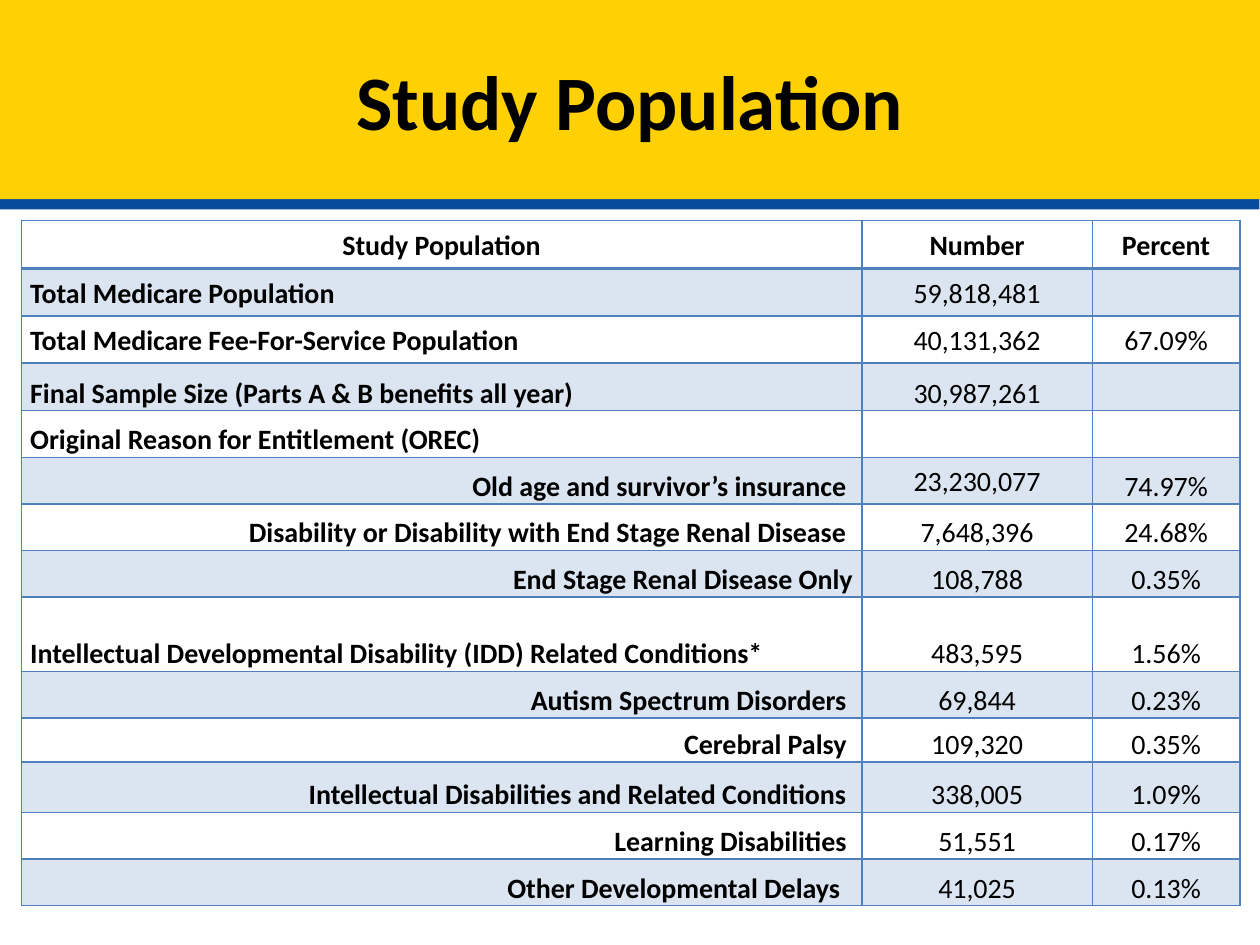
import dataclasses

import lxml.etree
import pptx
import pptx.dml.color
import pptx.enum.text
import pptx.oxml
import pptx.oxml.ns
import pptx.util

Inches = pptx.util.Inches
Align = pptx.enum.text.PP_ALIGN
Anchor = pptx.enum.text.MSO_ANCHOR
qn = pptx.oxml.ns.qn


@dataclasses.dataclass(frozen=True)
class Theme:
    font: str = "Calibri"
    title_size: int = 44
    table_size: int = 16
    text: str = "000000"
    banner: str = "FFD004"
    banner_edge: str = "084A9C"
    accent: str = "4F81BD"
    band_opacity: int = 20
    line_spacing: float = 1.07
    cell_margin: float = 0.07


@dataclasses.dataclass
class Row:
    label: str
    number: str = ""
    percent: str = ""
    height: float = 0.37
    indent: float | None = None  # extra right margin; right-aligns the label
    anchor: Anchor = Anchor.BOTTOM
    number_anchor: Anchor | None = None


COLUMN_WIDTHS = (6.67, 1.83, 1.17)
ROWS = (
    Row("Study Population", "Number", "Percent", 0.38, anchor=Anchor.MIDDLE),
    Row("Total Medicare Population", "59,818,481", height=0.38, anchor=Anchor.MIDDLE),
    Row("Total Medicare Fee-For-Service Population", "40,131,362", "67.09%", anchor=Anchor.MIDDLE),
    Row("Final Sample Size (Parts A & B benefits all year)", "30,987,261", height=0.38),
    Row("Original Reason for Entitlement (OREC)"),
    Row("Old age and survivor’s insurance", "23,230,077", "74.97%", indent=0.05,
        number_anchor=Anchor.MIDDLE),
    Row("Disability or Disability with End Stage Renal Disease", "7,648,396", "24.68%", indent=0.05),
    Row("End Stage Renal Disease Only", "108,788", "0.35%", indent=0),
    Row("Intellectual Developmental Disability (IDD) Related Conditions*", "483,595", "1.56%", 0.59),
    Row("Autism Spectrum Disorders", "69,844", "0.23%", indent=0.05),
    Row("Cerebral Palsy", "109,320", "0.35%", 0.35, indent=0.05),
    Row("Intellectual Disabilities and Related Conditions", "338,005", "1.09%", 0.4, indent=0.05),
    Row("Learning Disabilities", "51,551", "0.17%", indent=0.05),
    Row("Other Developmental Delays", "41,025", "0.13%", indent=0.1),
)


class SlideBuilder:
    def __init__(self, slide, theme):
        self.slide = slide
        self.theme = theme

    def add_text(self, paragraph, text, size, bold, alignment):
        paragraph.alignment = alignment
        run = paragraph.add_run()
        run.text = text
        run.font.name = self.theme.font
        run.font.size = pptx.util.Pt(size)
        run.font.bold = bold
        run.font.color.rgb = pptx.dml.color.RGBColor.from_string(self.theme.text)

    def add_banner_title(self, text, left, top, width, height):
        """Fill the title placeholder and give it a hard blue edge below."""
        title = self.slide.shapes.title
        title.left, title.top, title.width, title.height = left, top, width, height
        title.fill.solid()
        title.fill.fore_color.rgb = pptx.dml.color.RGBColor.from_string(self.theme.banner)
        title.text_frame.vertical_anchor = Anchor.MIDDLE
        self.add_text(title.text_frame.paragraphs[0], text, self.theme.title_size, True, Align.CENTER)
        title.shadow.inherit = False
        effects = title.element.spPr.find(qn("a:effectLst"))
        shadow = lxml.etree.SubElement(
            effects, qn("a:outerShdw"), blurRad="0", dist=str(pptx.util.Pt(6)),
            dir=str(94 * 60000), algn="tl", rotWithShape="0")
        lxml.etree.SubElement(shadow, qn("a:srgbClr"), val=self.theme.banner_edge)

    def add_table(self, rows, column_widths, left, top):
        width = Inches(sum(column_widths))
        height = Inches(sum(row.height for row in rows))
        table = self.slide.shapes.add_table(
            len(rows), len(column_widths), left, top, width, height).table
        for column, column_width in zip(table.columns, column_widths):
            column.width = Inches(column_width)
        for row_index, row in enumerate(rows):
            table.rows[row_index].height = Inches(row.height)
            for column_index, text in enumerate((row.label, row.number, row.percent)):
                self.format_cell(table.cell(row_index, column_index), text, row,
                                 row_index, column_index)

    def format_cell(self, cell, text, row, row_index, column_index):
        is_header, is_label = row_index == 0, column_index == 0
        alignment, indent = Align.CENTER, 0
        if is_label and not is_header:
            alignment = Align.LEFT if row.indent is None else Align.RIGHT
            indent = row.indent or 0
        cell.margin_left = Inches(self.theme.cell_margin)
        cell.margin_right = Inches(self.theme.cell_margin + indent)
        cell.margin_top = cell.margin_bottom = 0
        cell.vertical_anchor = row.anchor
        if column_index == 1 and row.number_anchor is not None:
            cell.vertical_anchor = row.number_anchor
        if text:
            paragraph = cell.text_frame.paragraphs[0]
            paragraph.line_spacing = self.theme.line_spacing
            self.add_text(paragraph, text, self.theme.table_size, is_header or is_label, alignment)
        self.fill_cell(cell, row_index % 2 == 1)
        self.border_cell(cell, 2 if row_index == 1 else 1, 2 if is_header else 1)

    def fill_cell(self, cell, is_banded):
        if not is_banded:
            cell.fill.background()
            return
        cell.fill.solid()
        cell.fill.fore_color.rgb = pptx.dml.color.RGBColor.from_string(self.theme.accent)
        color = cell._tc.tcPr.find(".//" + qn("a:srgbClr"))
        lxml.etree.SubElement(color, qn("a:alpha"), val=str(self.theme.band_opacity * 1000))

    def border_cell(self, cell, top_width, bottom_width):
        """Insert the four borders ahead of the fill, as the schema demands."""
        widths = {"a:lnL": 1, "a:lnR": 1, "a:lnT": top_width, "a:lnB": bottom_width}
        for position, (tag, width) in enumerate(widths.items()):
            line = pptx.oxml.parse_xml(
                f'<{tag} {pptx.oxml.ns.nsdecls("a")} w="{pptx.util.Pt(width)}">'
                f'<a:solidFill><a:srgbClr val="{self.theme.accent}"/></a:solidFill></{tag}>')
            cell._tc.tcPr.insert(position, line)


def main():
    presentation = pptx.Presentation()
    presentation.slide_width = Inches(10)
    presentation.slide_height = Inches(7.5)
    title_only = presentation.slide_layouts[5]
    builder = SlideBuilder(presentation.slides.add_slide(title_only), Theme())
    builder.add_banner_title("Study Population", 0, 0, Inches(10), Inches(1.58))
    builder.add_table(ROWS, COLUMN_WIDTHS, Inches(0.17), Inches(1.75))
    presentation.save("out.pptx")


if __name__ == "__main__":
    main()
